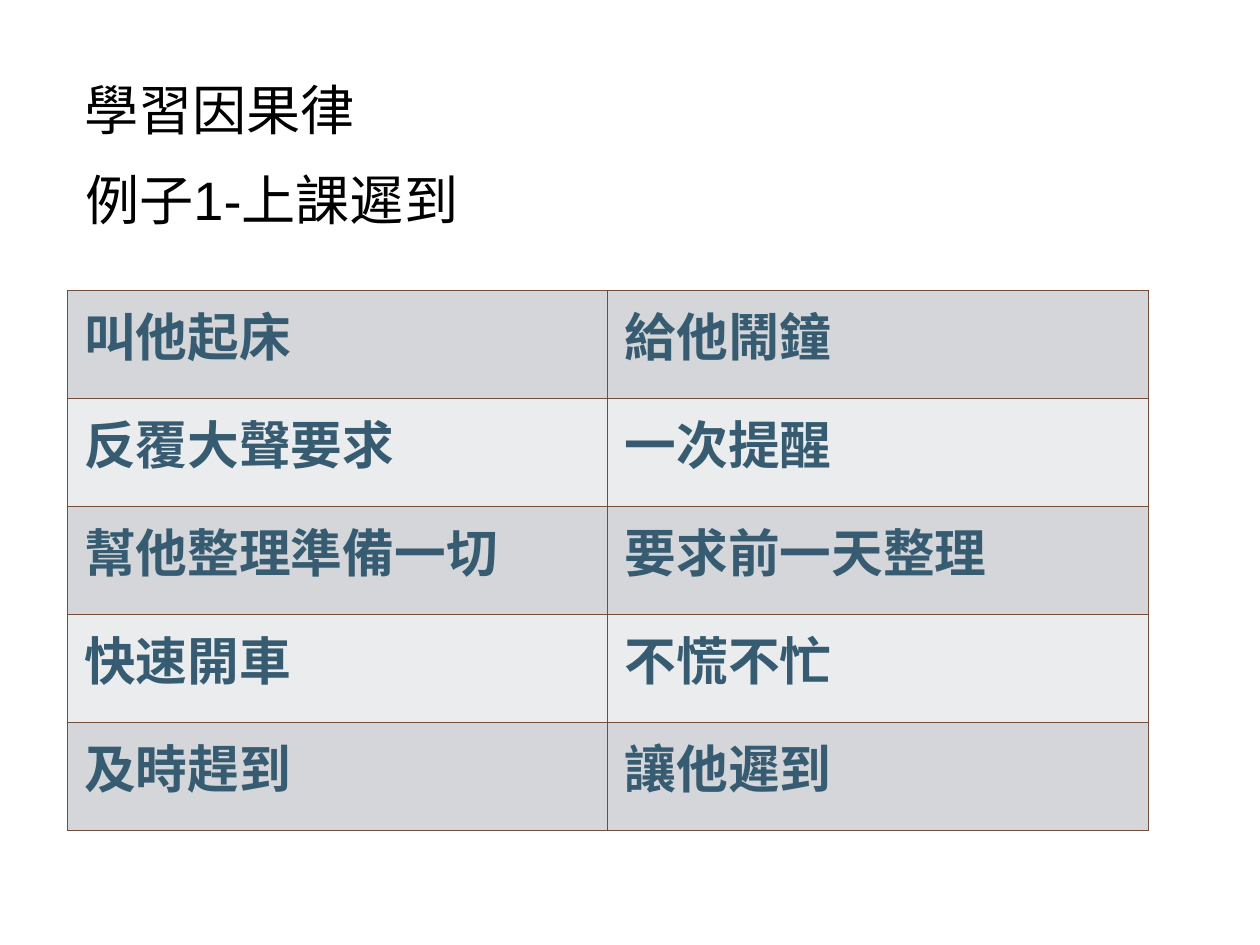
from lxml import etree
from pptx import Presentation
from pptx.dml.color import RGBColor
from pptx.enum.text import MSO_ANCHOR, MSO_AUTO_SIZE
from pptx.oxml.ns import qn
from pptx.util import Inches, Pt

MIDDLE = MSO_ANCHOR.MIDDLE
TOP = MSO_ANCHOR.TOP
GROW = MSO_AUTO_SIZE.SHAPE_TO_FIT_TEXT

WIDE, HIGH = 14.22, 10.67
COL, ROW = 6.1, 1.22
LEFT, HEAD = 0.76, 3.28
INSET, INDENT = 0.07, 0.12
FONT = "Arial"

BLACK = RGBColor(0x00, 0x00, 0x00)
BLUE = RGBColor(0x37, 0x5C, 0x71)
BROWN = RGBColor(0x71, 0x4D, 0x3A)
BANDS = (RGBColor(0xD4, 0xD6, 0xD9), RGBColor(0xEB, 0xEC, 0xED))

TITLES = (
    ("學習因果律", 0.95, 0.86, 3.75),
    ("例子1-上課遲到", 0.96, 1.88, 4.63),
)
PAIRS = (
    ("叫他起床", "給他鬧鐘"),
    ("反覆大聲要求", "一次提醒"),
    ("幫他整理準備一切", "要求前一天整理"),
    ("快速開車", "不慌不忙"),
    ("及時趕到", "讓他遲到"),
)


def add_run(para, text, size, color, bold=False):
    """Add one styled run to a paragraph."""
    run = para.add_run()
    run.text = text
    font = run.font
    font.name, font.size, font.bold = FONT, Pt(size), bold
    font.color.rgb = color


def add_title(slide, text, left, top, width):
    """Add one line of the heading."""
    box = slide.shapes.add_textbox(
        Inches(left), Inches(top), Inches(width), Inches(0.74))
    frame = box.text_frame
    frame.margin_left = frame.margin_right = 0
    frame.margin_top = frame.margin_bottom = 0
    frame.word_wrap = True
    frame.auto_size = GROW
    frame.vertical_anchor = MIDDLE
    add_run(frame.paragraphs[0], text, 44, BLACK)


def add_edges(cell):
    """Draw a thin line on all four sides of a cell."""
    props = cell._tc.get_or_add_tcPr()
    for spot, side in enumerate(("a:lnL", "a:lnR", "a:lnT", "a:lnB")):
        line = etree.Element(qn(side), w=str(Pt(1)))
        fill = etree.SubElement(line, qn("a:solidFill"))
        etree.SubElement(fill, qn("a:srgbClr"), val=str(BROWN))
        props.insert(spot, line)


def fill_cell(cell, text, color):
    """Set the text, fill and edges of a cell."""
    cell.fill.solid()
    cell.fill.fore_color.rgb = color
    cell.margin_left = cell.margin_right = Inches(INSET)
    cell.margin_top = cell.margin_bottom = Inches(INSET)
    cell.vertical_anchor = TOP
    para = cell.text_frame.paragraphs[0]
    props = para._p.get_or_add_pPr()
    props.set("marL", "0")
    props.set("indent", str(Inches(INDENT)))
    add_run(para, text, 42, BLUE, True)
    add_edges(cell)


def add_grid(slide, pairs):
    """Add the two-column table with banded rows."""
    count = len(pairs)
    table = slide.shapes.add_table(
        count, 2, Inches(LEFT), Inches(HEAD),
        Inches(2 * COL), Inches(count * ROW)).table
    table.first_row = table.horz_banding = False
    for row, pair in enumerate(pairs):
        for col, text in enumerate(pair):
            fill_cell(table.cell(row, col), text, BANDS[row % 2])


def main():
    """Build and save the slide."""
    deck = Presentation()
    deck.slide_width, deck.slide_height = Inches(WIDE), Inches(HIGH)
    slide = deck.slides.add_slide(deck.slide_layouts[6])
    for title in TITLES:
        add_title(slide, *title)
    add_grid(slide, PAIRS)
    deck.save("out.pptx")


if __name__ == "__main__":
    main()
